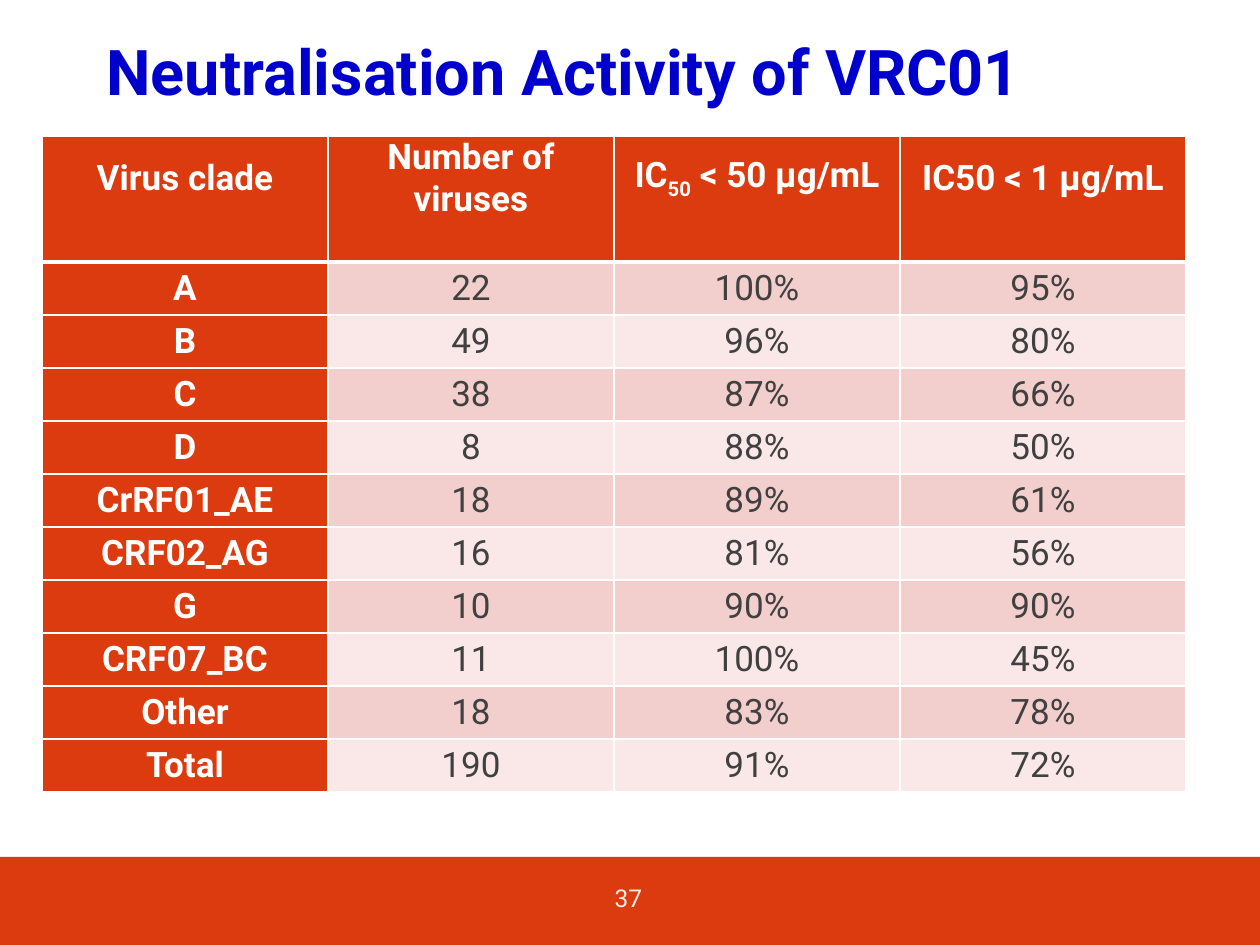
import dataclasses

import pptx
import pptx.dml.color
import pptx.enum.shapes
import pptx.enum.text
import pptx.oxml
import pptx.oxml.ns
import pptx.util

EMU_PER_PX = 914400 / 126
ALIGN = pptx.enum.text.PP_ALIGN
ANCHOR = pptx.enum.text.MSO_ANCHOR


@dataclasses.dataclass(frozen=True)
class Theme:
    font: str = "Roboto"
    title: str = "0000CC"
    accent: str = "DC3B0F"
    white: str = "FFFFFF"
    body: str = "404041"
    page_number: str = "F2F0E6"
    bands: tuple = ("F2CECC", "F9E8E7")
    title_pt: int = 36
    table_pt: int = 20
    page_number_pt: int = 14
    rule_pt: int = 1
    header_rule_pt: int = 3
    subscript: str = "-25000"


def px(length):
    return pptx.util.Emu(round(length * EMU_PER_PX))


def rgb(color):
    return pptx.dml.color.RGBColor.from_string(color)


class SlideBuilder:
    def __init__(self, slide, theme):
        self.slide = slide
        self.theme = theme

    def add_run(self, paragraph, text, size, color, bold=False, subscript=False):
        run = paragraph.add_run()
        run.text = text
        run.font.name = self.theme.font
        run.font.size = pptx.util.Pt(size)
        run.font.bold = bold
        run.font.color.rgb = rgb(color)
        if subscript:
            run.font._element.set("baseline", self.theme.subscript)

    def band(self, left, top, width, height, color):
        rectangle = pptx.enum.shapes.MSO_SHAPE.RECTANGLE
        shape = self.slide.shapes.add_shape(
            rectangle, px(left), px(top), px(width), px(height))
        shape.shadow.inherit = False
        shape.fill.solid()
        shape.fill.fore_color.rgb = rgb(color)
        shape.line.fill.background()

    def text(self, left, top, width, height, words, size, color,
             bold=False, align=ALIGN.LEFT, top_inset=6):
        box = self.slide.shapes.add_textbox(px(left), px(top), px(width), px(height))
        frame = box.text_frame
        frame.word_wrap = True
        frame.margin_top = px(top_inset)
        paragraph = frame.paragraphs[0]
        paragraph.alignment = align
        self.add_run(paragraph, words, size, color, bold)

    def border(self, cell, side, points):
        line = pptx.oxml.parse_xml(
            f'<a:{side} {pptx.oxml.ns.nsdecls("a")} w="{pptx.util.Pt(points)}">'
            f'<a:solidFill><a:srgbClr val="{self.theme.white}"/></a:solidFill></a:{side}>')
        cell._tc.get_or_add_tcPr().append(line)

    def cell(self, cell, runs, fill, color, bold, top_rule, bottom_rule, bottom_inset=0):
        """Fill one table cell; runs is a list of (text, is_subscript)."""
        rule = self.theme.rule_pt
        for side, points in (("lnL", rule), ("lnR", rule),
                             ("lnT", top_rule), ("lnB", bottom_rule)):
            self.border(cell, side, points)
        cell.fill.solid()
        cell.fill.fore_color.rgb = rgb(fill)
        cell.vertical_anchor = ANCHOR.MIDDLE
        cell.margin_left = cell.margin_right = px(9)
        cell.margin_top = 0
        cell.margin_bottom = px(bottom_inset)
        paragraph = cell.text_frame.paragraphs[0]
        paragraph.alignment = ALIGN.CENTER
        for words, subscript in runs:
            self.add_run(paragraph, words, self.theme.table_pt, color, bold, subscript)

    def table(self, left, top, column_width, header_height, row_height, header, rows):
        theme = self.theme
        table = self.slide.shapes.add_table(
            len(rows) + 1, len(header), px(left), px(top),
            px(column_width * len(header)),
            px(header_height + row_height * len(rows))).table
        for column in table.columns:
            column.width = px(column_width)
        for index, row in enumerate(table.rows):
            row.height = px(row_height if index else header_height)

        for column, runs in enumerate(header):
            self.cell(table.cell(0, column), runs, theme.accent, theme.white, True,
                      theme.rule_pt, theme.header_rule_pt, bottom_inset=41)
        for index, values in enumerate(rows):
            top_rule = theme.rule_pt if index else theme.header_rule_pt
            for column, value in enumerate(values):
                is_clade = column == 0
                fill = theme.accent if is_clade else theme.bands[index % 2]
                color = theme.white if is_clade else theme.body
                self.cell(table.cell(index + 1, column), [(value, False)], fill, color,
                          is_clade, top_rule, theme.rule_pt)


HEADER = [
    [("Virus clade", False)],
    [("Number of viruses", False)],
    [("IC", False), ("50", True), (" < 50 µg/mL", False)],
    [("IC50 < 1 µg/mL", False)],
]
CLADES = [
    ("A", "22", "100%", "95%"),
    ("B", "49", "96%", "80%"),
    ("C", "38", "87%", "66%"),
    ("D", "8", "88%", "50%"),
    ("CrRF01_AE", "18", "89%", "61%"),
    ("CRF02_AG", "16", "81%", "56%"),
    ("G", "10", "90%", "90%"),
    ("CRF07_BC", "11", "100%", "45%"),
    ("Other", "18", "83%", "78%"),
    ("Total", "190", "91%", "72%"),
]


def main():
    presentation = pptx.Presentation()
    presentation.slide_width = px(1260)
    presentation.slide_height = px(945)
    slide = presentation.slides.add_slide(presentation.slide_layouts[6])
    theme = Theme()
    builder = SlideBuilder(slide, theme)

    builder.band(0, 857, 1260, 88, theme.accent)
    builder.text(573, 877, 111, 50, "37", theme.page_number_pt, theme.page_number,
                 align=ALIGN.CENTER)
    builder.table(42, 136, 286, 126, 53, HEADER, CLADES)
    builder.text(94, 21, 1029, 116, "Neutralisation Activity of VRC01",
                 theme.title_pt, theme.title, bold=True, top_inset=12)
    presentation.save("out.pptx")


if __name__ == "__main__":
    main()
